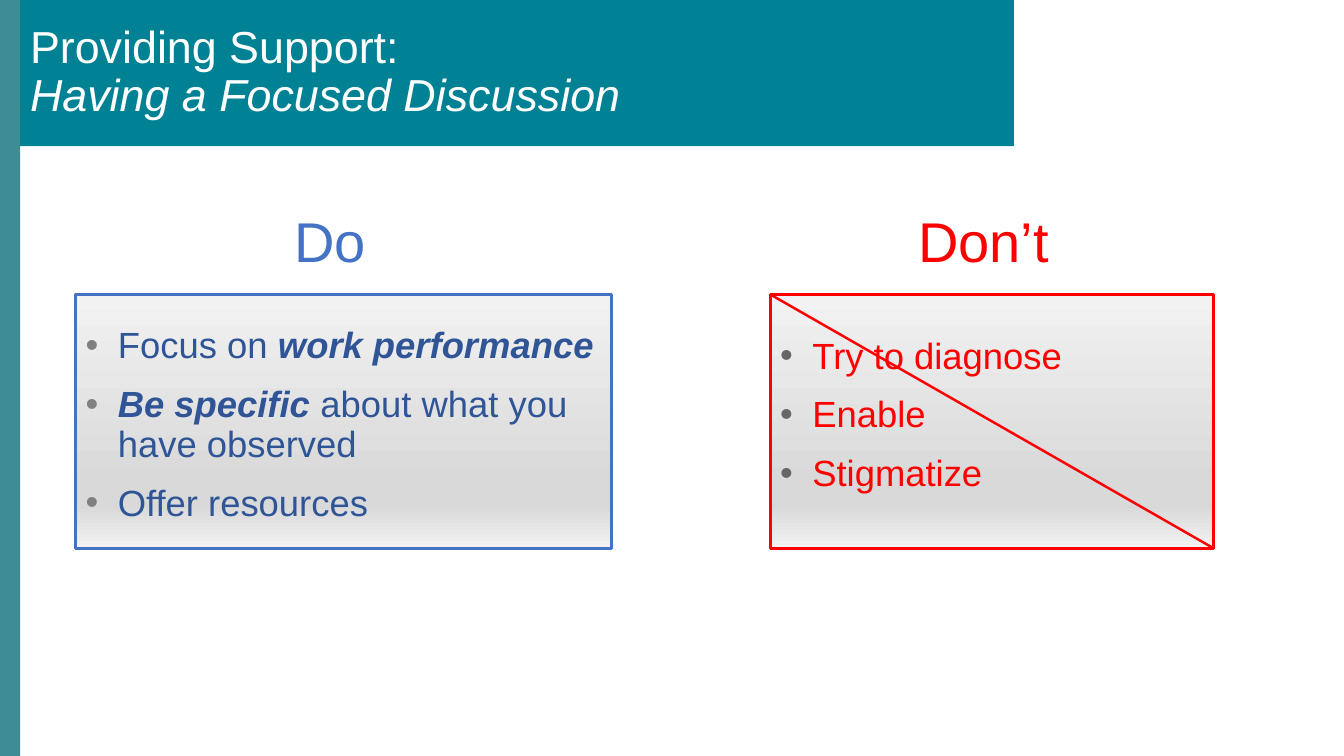
from dataclasses import dataclass

from lxml import etree
from pptx import Presentation
from pptx.dml.color import RGBColor
from pptx.enum.shapes import MSO_CONNECTOR, MSO_SHAPE
from pptx.enum.text import MSO_ANCHOR, PP_ALIGN
from pptx.oxml.ns import qn
from pptx.util import Inches, Pt

RECTANGLE = MSO_SHAPE.RECTANGLE
STRAIGHT = MSO_CONNECTOR.STRAIGHT
TOP, MIDDLE = MSO_ANCHOR.TOP, MSO_ANCHOR.MIDDLE
LEFT = PP_ALIGN.LEFT
SLIDE_WIDTH, SLIDE_HEIGHT = Inches(13.33), Inches(7.5)


@dataclass(frozen=True)
class Theme:
    font: str = "Arial"
    white: str = "FFFFFF"
    side_bar: str = "3E8C94"
    banner: str = "008194"
    do: str = "4472C4"
    do_text: str = "2F5597"
    do_bullet: str = "808080"
    dont: str = "FF0000"
    dont_bullet: str = "666666"
    panel_stops: tuple = ((0, "F2F2F2"), (74, "D9D9D9"), (83, "D9D9D9"), (100, "F2F2F2"))
    title_size: int = 32
    heading_size: int = 40
    item_size: int = 26
    line_spacing: float = 0.9
    item_gap: int = 14
    indent: float = 0.32
    border: float = 2
    strike: float = 1.75


THEME = Theme()


def across(percent):
    return round(SLIDE_WIDTH * percent / 100)


def down(percent):
    return round(SLIDE_HEIGHT * percent / 100)


def place(left, top, width, height):
    return across(left), down(top), across(width), down(height)


def add_rectangle(slide, area, color):
    shape = slide.shapes.add_shape(RECTANGLE, *place(*area))
    shape.shadow.inherit = False
    shape.fill.solid()
    shape.fill.fore_color.rgb = RGBColor.from_string(color)
    shape.line.fill.background()
    return shape


def add_run(paragraph, text, size, color, bold=False, italic=False):
    run = paragraph.add_run()
    run.text = text
    run.font.name = THEME.font
    run.font.size = Pt(size)
    run.font.bold = bold
    run.font.italic = italic
    run.font.color.rgb = RGBColor.from_string(color)


def add_title(slide, area, first_line, second_line):
    banner = add_rectangle(slide, area, THEME.banner)
    frame = banner.text_frame
    frame.word_wrap = True
    frame.vertical_anchor = MIDDLE
    paragraph = frame.paragraphs[0]
    paragraph.alignment = LEFT
    paragraph.line_spacing = THEME.line_spacing
    add_run(paragraph, first_line, THEME.title_size, THEME.white)
    paragraph.add_line_break()
    add_run(paragraph, second_line, THEME.title_size, THEME.white, italic=True)


def add_heading(slide, area, text, color):
    frame = slide.shapes.add_textbox(*place(*area)).text_frame
    frame.word_wrap = False
    add_run(frame.paragraphs[0], text, THEME.heading_size, color)


def fill_with_gradient(shape):
    shape.fill.gradient()
    shape.fill.gradient_angle = 270
    stops = shape.element.spPr.find(qn("a:gradFill")).find(qn("a:gsLst"))
    for stop in list(stops):
        stops.remove(stop)
    for position, color in THEME.panel_stops:
        stop = etree.SubElement(stops, qn("a:gs"), pos=str(position * 1000))
        etree.SubElement(stop, qn("a:srgbClr"), val=color)


def add_bullet(paragraph, color):
    properties = paragraph._p.get_or_add_pPr()
    properties.set("marL", str(Inches(THEME.indent)))
    properties.set("indent", str(-Inches(THEME.indent)))
    bullet_color = etree.SubElement(properties, qn("a:buClr"))
    etree.SubElement(bullet_color, qn("a:srgbClr"), val=color)
    etree.SubElement(properties, qn("a:buFont"), typeface=THEME.font)
    etree.SubElement(properties, qn("a:buChar"), char="•")


def add_panel(slide, area, items, border, text_color, bullet_color, top_margin):
    panel = add_rectangle(slide, area, THEME.white)
    fill_with_gradient(panel)
    panel.line.color.rgb = RGBColor.from_string(border)
    panel.line.width = Pt(THEME.border)
    frame = panel.text_frame
    frame.word_wrap = True
    frame.vertical_anchor = TOP
    frame.margin_top = down(top_margin)
    for index, item in enumerate(items):
        paragraph = frame.add_paragraph() if index else frame.paragraphs[0]
        add_bullet(paragraph, bullet_color)
        paragraph.alignment = LEFT
        paragraph.line_spacing = THEME.line_spacing
        if index:
            paragraph.space_before = Pt(THEME.item_gap)
        for text, strong in item:
            add_run(paragraph, text, THEME.item_size, text_color, strong, strong)


def add_strike(slide, area):
    left, top, width, height = place(*area)
    strike = slide.shapes.add_connector(STRAIGHT, left, top, left + width, top + height)
    strike.line.color.rgb = RGBColor.from_string(THEME.dont)
    strike.line.width = Pt(THEME.strike)
    etree.SubElement(strike.element.spPr, qn("a:effectLst"))


def main():
    presentation = Presentation()
    presentation.slide_width, presentation.slide_height = SLIDE_WIDTH, SLIDE_HEIGHT
    slide = presentation.slides.add_slide(presentation.slide_layouts[6])

    bar_width = 1.5
    panel_top, panel_height = 38.93, 33.6
    heading_top, heading_height = 26.6, 10.27
    do_area = (5.63, panel_top, 39.9, panel_height)
    dont_area = (57.3, panel_top, 33, panel_height)
    do_items = [
        [("Focus on ", False), ("work performance", True)],
        [("Be specific", True), (" about what you have observed", False)],
        [("Offer resources", False)],
    ]
    dont_items = [[(text, False)] for text in ("Try to diagnose", "Enable", "Stigmatize")]

    add_rectangle(slide, (0, 0, bar_width, 100), THEME.side_bar)
    add_title(slide, (bar_width, 0, 73.95, 19.33),
              "Providing Support:", "Having a Focused Discussion")
    add_panel(slide, do_area, do_items, THEME.do, THEME.do_text, THEME.do_bullet, 4.4)
    add_heading(slide, (21.15, heading_top, 7.12, heading_height), "Do", THEME.do)
    add_panel(slide, dont_area, dont_items, THEME.dont, THEME.dont, THEME.dont_bullet, 5.73)
    add_heading(slide, (67.58, heading_top, 11.33, heading_height), "Don’t", THEME.dont)
    add_strike(slide, dont_area)
    presentation.save("out.pptx")


if __name__ == "__main__":
    main()
